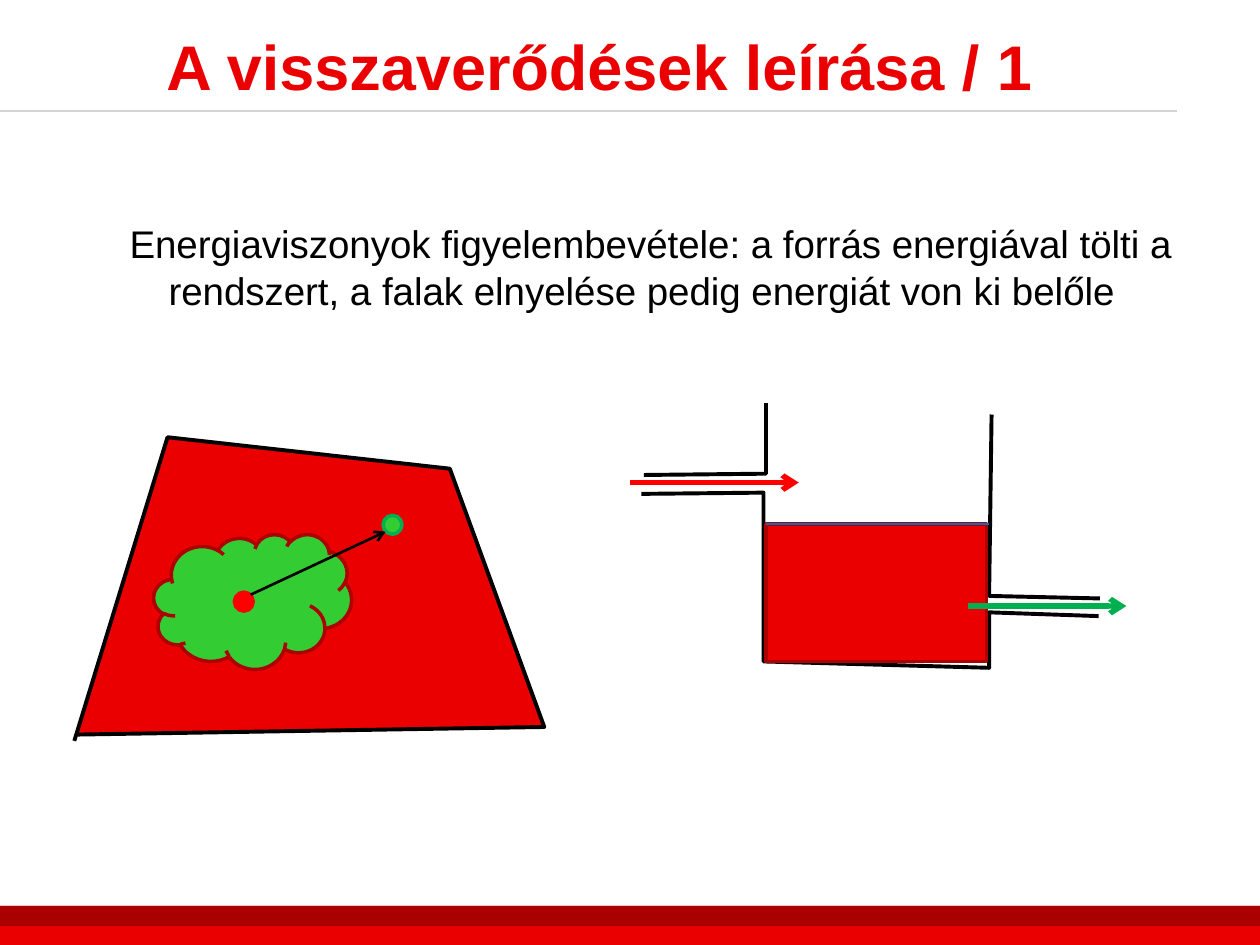
from pptx import Presentation
from pptx.dml.color import RGBColor
from pptx.enum.shapes import MSO_CONNECTOR, MSO_SHAPE
from pptx.enum.text import MSO_ANCHOR, PP_ALIGN
from pptx.oxml.ns import qn
from pptx.util import Inches, Pt
from lxml import etree

RECT, CLOUD, OVAL = MSO_SHAPE.RECTANGLE, MSO_SHAPE.CLOUD, MSO_SHAPE.OVAL
STRAIGHT = MSO_CONNECTOR.STRAIGHT
LEFT, MIDDLE, TOP = PP_ALIGN.LEFT, MSO_ANCHOR.MIDDLE, MSO_ANCHOR.TOP
FONT = "Arial"

COLORS = {
    "red": "EA0000", "dark red": "AA0000", "outline": "AD0000",
    "bright red": "FF0000", "green": "33CC33", "dark green": "00B050",
    "blue": "0070C0", "gray": "D4D4D4", "black": "000000",
}

# Content
TITLE = "A visszaverődések leírása / 1"
BODY = ("Energiaviszonyok figyelembevétele: a forrás energiával tölti a "
        "rendszert, a falak elnyelése pedig energiát von ki belőle")

# Shapes: kind, (left, top, width, height), fill, line colour
FOOTER_BARS = [
    (RECT, (0, 7.19, 10, 0.31), "red", None),
    (RECT, (0, 7.19, 10, 0.16), "dark red", None),
]
ROOM_PARTS = [
    (CLOUD, (1.22, 4.24, 1.57, 1.07), "green", "outline"),
    (OVAL, (1.86, 4.7, 0.15, 0.15), "bright red", "bright red"),
    (OVAL, (3.04, 4.09, 0.15, 0.15), "green", "dark green"),
]
WATER = (RECT, (6.08, 4.16, 1.75, 1.09), "red", "outline")

# Outlines
ROOM = [(0.59, 5.88), (1.33, 3.47), (3.57, 3.72), (4.32, 5.77), (0.62, 5.83)]
TANK_WALLS = [
    [(6.08, 3.2), (6.08, 3.76), (5.11, 3.77)],
    [(5.09, 3.92), (6.06, 3.91), (6.06, 5.25), (7.85, 5.3),
     (7.85, 4.86), (8.72, 4.89)],
    [(8.73, 4.75), (7.85, 4.73), (7.87, 3.29)],
]

# Lines: start, end, colour, width, arrowhead
TITLE_RULE = ((0, 0.88), (9.34, 0.88), "gray", 1.5, False)
SOUND_PATH = ((1.99, 4.72), (3.06, 4.22), "black", 1.5, True)
INFLOW = ((5, 3.83), (6.34, 3.83), "bright red", 3, True)
OUTFLOW = ((7.68, 4.81), (8.94, 4.81), "dark green", 3, True)
WATER_LEVEL = ((6.08, 4.16), (7.85, 4.16), "blue", 1.5, False)


def color(name):
    return RGBColor.from_string(COLORS[name])


def style(shape, fill, line, width):
    shape.shadow.inherit = False
    if fill:
        shape.fill.solid()
        shape.fill.fore_color.rgb = color(fill)
    else:
        shape.fill.background()
    if line:
        shape.line.color.rgb = color(line)
        shape.line.width = Pt(width)
    else:
        shape.line.fill.background()


def add_shape(page, kind, place, fill, line):
    shape = page.shapes.add_shape(kind, *map(Inches, place))
    style(shape, fill, line, 2)


def add_outline(page, points, fill=None):
    start, *rest = [(Inches(x), Inches(y)) for x, y in points]
    builder = page.shapes.build_freeform(*start)
    builder.add_line_segments(rest, close=False)
    style(builder.convert_to_shape(), fill, "black", 2.25)


def add_line(page, start, end, name, width, arrow):
    line = page.shapes.add_connector(STRAIGHT, *map(Inches, start + end))
    line.line.color.rgb = color(name)
    line.line.width = Pt(width)
    if arrow:
        etree.SubElement(line.line._get_or_add_ln(), qn("a:tailEnd"), type="arrow")
    etree.SubElement(line._element.spPr, qn("a:effectLst"))


def write(box, text, size, name, bold, anchor):
    frame = box.text_frame
    frame.word_wrap = True
    frame.vertical_anchor = anchor
    para = frame.paragraphs[0]
    para.alignment = LEFT
    span = para.add_run()
    span.text = text
    span.font.name = FONT
    span.font.size = Pt(size)
    span.font.bold = bold
    span.font.color.rgb = color(name)
    return para


def main():
    deck = Presentation()
    deck.slide_width, deck.slide_height = Inches(10), Inches(7.5)
    page = deck.slides.add_slide(deck.slide_layouts[5])

    # Frame of the page
    for bar in FOOTER_BARS:
        add_shape(page, *bar)
    add_line(page, *TITLE_RULE)

    # Title and body text
    title = page.shapes.title
    title.left, title.top, title.width, title.height = map(
        Inches, (1.22, 0.08, 8.74, 0.87))
    write(title, TITLE, 36, "red", True, MIDDLE)
    body = page.shapes.add_textbox(*map(Inches, (0.43, 1.7, 9, 0.82)))
    para = write(body, BODY, 22, "black", False, TOP)
    properties = para._p.get_or_add_pPr()
    properties.set("marL", str(Inches(0.81)))
    properties.set("indent", str(Inches(-0.31)))

    # Room with source, sound cloud and receiver
    add_outline(page, ROOM, "red")
    for part in ROOM_PARTS:
        add_shape(page, *part)
    add_line(page, *SOUND_PATH)

    # Tank with inflow and outflow
    for wall in TANK_WALLS:
        add_outline(page, wall)
    add_line(page, *INFLOW)
    add_shape(page, *WATER)
    for line in (OUTFLOW, WATER_LEVEL):
        add_line(page, *line)

    deck.save("out.pptx")


if __name__ == "__main__":
    main()
